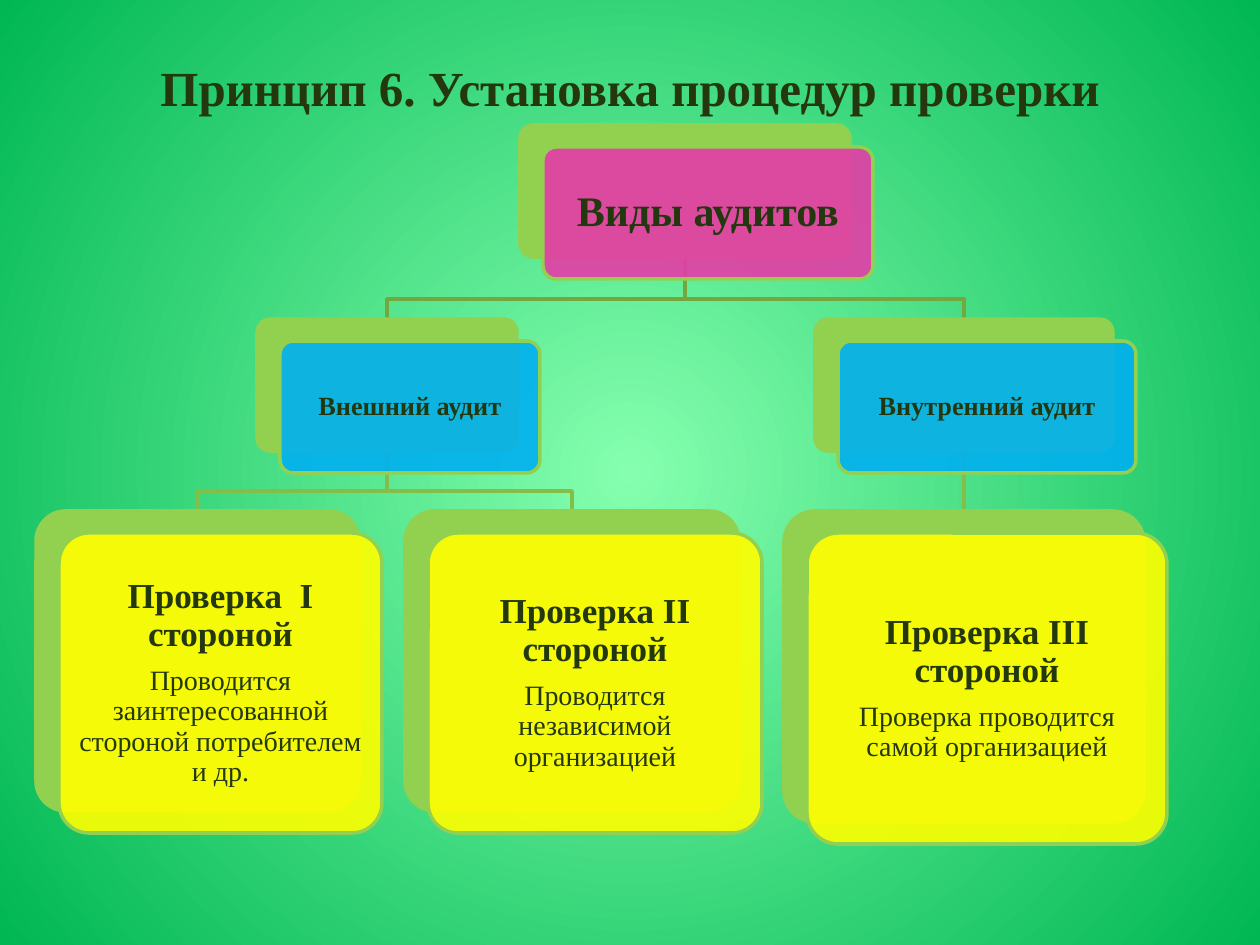
from collections import namedtuple

from lxml.etree import SubElement
from pptx import Presentation
from pptx.dml.color import RGBColor
from pptx.enum.shapes import MSO_CONNECTOR as CONNECTOR, MSO_SHAPE as SHAPE
from pptx.enum.text import MSO_ANCHOR as ANCHOR, PP_ALIGN as ALIGN
from pptx.oxml.ns import qn
from pptx.util import Pt

PX = 914400 / 126
FONT = "Times New Roman"
INK = RGBColor(0x24, 0x38, 0x0F)
LEAF = RGBColor(0x92, 0xD0, 0x50)
PINK = RGBColor(0xE4, 0x3C, 0xA8)
BLUE = RGBColor(0x00, 0xB0, 0xF0)
YELLOW = RGBColor(0xFF, 0xFF, 0x00)
UPPER_BRANCH = RGBColor(0x75, 0xA7, 0x40)
LOWER_BRANCH = RGBColor(0x85, 0xBD, 0x49)
GLOW = RGBColor(0x85, 0xFF, 0xAF)
GREEN = RGBColor(0x00, 0xB7, 0x53)

FRONT_DX, FRONT_DY = 23, 22
BEND = 20  # height of an elbow above the child card

Box = namedtuple("Box", "left top width height")
Level = namedtuple("Level", "fill inset heading_size")

ROOT = Level(PINK, 13, 24)
AUDIT = Level(BLUE, 8, 15)
CHECK = Level(YELLOW, 10, 20)

CARDS = {
    "types": (Box(520, 125, 330, 132), ROOT, "Виды аудитов", None),
    "external": (Box(257, 319, 260, 132), AUDIT, "Внешний аудит", None),
    "first": (Box(36, 511, 323, 300), CHECK, "Проверка  I стороной",
              "Проводится заинтересованной стороной потребителем и др."),
    "second": (Box(405, 511, 334, 300), CHECK, "Проверка II стороной",
               "Проводится независимой организацией"),
    "internal": (Box(815, 319, 298, 132), AUDIT, "Внутренний аудит", None),
    "third": (Box(784, 511, 360, 311), CHECK, "Проверка III стороной",
              "Проверка проводится самой организацией"),
}
BRANCHES = [
    ("internal", "third", LOWER_BRANCH),
    ("types", "internal", UPPER_BRANCH),
    ("external", "second", LOWER_BRANCH),
    ("external", "first", LOWER_BRANCH),
    ("types", "external", UPPER_BRANCH),
]


def emu(*lengths):
    return [round(length * PX) for length in lengths]


def set_all(target, values):
    for name, value in values.items():
        setattr(target, name, value)


def paint_background(slide):
    fill = slide.background.fill
    fill.gradient()
    for stop, color in zip(fill.gradient_stops, (GLOW, GREEN)):
        stop.color.rgb = color
    gradient = slide.element.find(".//" + qn("a:gradFill"))
    gradient.remove(gradient.find(qn("a:lin")))
    circle = SubElement(gradient, qn("a:path"), path="circle")
    SubElement(circle, qn("a:fillToRect"),
               dict.fromkeys("ltrb", "50000"))


def write(paragraph, text, size, bold):
    paragraph.alignment = ALIGN.CENTER
    run = paragraph.add_run()
    run.text = text
    set_all(run.font, {"name": FONT, "size": Pt(size), "bold": bold})
    run.font.color.rgb = INK


def add_title(slide, box, text):
    title = slide.shapes.title
    set_all(title, dict(zip(Box._fields, emu(*box))))
    title.text_frame.vertical_anchor = ANCHOR.MIDDLE
    write(title.text_frame.paragraphs[0], text, 28, True)


def add_branch(slide, parent, child, color):
    """Join the bottom of the parent box to the top of the child box."""
    start_x, end_x = (box.left + box.width / 2 for box in (parent, child))
    start_y, end_y = parent.top + parent.height, child.top
    if start_x == end_x:
        branch = slide.shapes.add_connector(
            CONNECTOR.STRAIGHT, *emu(start_x, start_y, end_x, end_y))
        SubElement(branch.element.spPr, qn("a:effectLst"))
    else:
        bend_y = end_y - BEND
        builder = slide.shapes.build_freeform(start_x, start_y, scale=PX)
        builder.add_line_segments(
            [(start_x, bend_y), (end_x, bend_y), (end_x, end_y)], close=False)
        branch = builder.convert_to_shape()
        branch.fill.background()
        branch.shadow.inherit = False
    branch.line.color.rgb = color
    branch.line.width = Pt(2)


def add_panel(slide, box, color):
    panel = slide.shapes.add_shape(SHAPE.ROUNDED_RECTANGLE, *emu(*box))
    panel.adjustments[0] = 0.1
    panel.shadow.inherit = False
    panel.fill.solid()
    panel.fill.fore_color.rgb = color
    panel.line.color.rgb = LEAF
    panel.line.width = Pt(2)
    return panel


def add_card(slide, box, level, heading, detail):
    """Place a back panel in the box and a shifted, translucent front panel."""
    add_panel(slide, box, LEAF)
    front = add_panel(
        slide,
        box._replace(left=box.left + FRONT_DX, top=box.top + FRONT_DY),
        level.fill)
    tint = front.element.spPr.find(qn("a:solidFill")).find(qn("a:srgbClr"))
    SubElement(tint, qn("a:alpha"), val="90000")

    frame = front.text_frame
    inset = emu(level.inset)[0]
    set_all(frame, {
        "word_wrap": True, "vertical_anchor": ANCHOR.MIDDLE,
        "margin_left": inset, "margin_right": inset,
        "margin_top": inset, "margin_bottom": inset,
    })
    write(frame.paragraphs[0], heading, level.heading_size, True)
    if detail:
        frame.paragraphs[0].space_after = Pt(7)
        write(frame.add_paragraph(), detail, 16, False)
    for paragraph in frame.paragraphs:
        paragraph.line_spacing = 0.9


def add_audit_tree(slide):
    for parent, child, color in BRANCHES:
        add_branch(slide, CARDS[parent][0], CARDS[child][0], color)
    for card in CARDS.values():
        add_card(slide, *card)


def main():
    deck = Presentation()
    deck.slide_width, deck.slide_height = emu(1260, 945)
    slide = deck.slides.add_slide(deck.slide_layouts[5])
    paint_background(slide)
    add_title(slide, Box(63, 38, 1134, 97),
              "Принцип 6. Установка процедур проверки")
    add_audit_tree(slide)
    deck.save("out.pptx")


if __name__ == "__main__":
    main()
